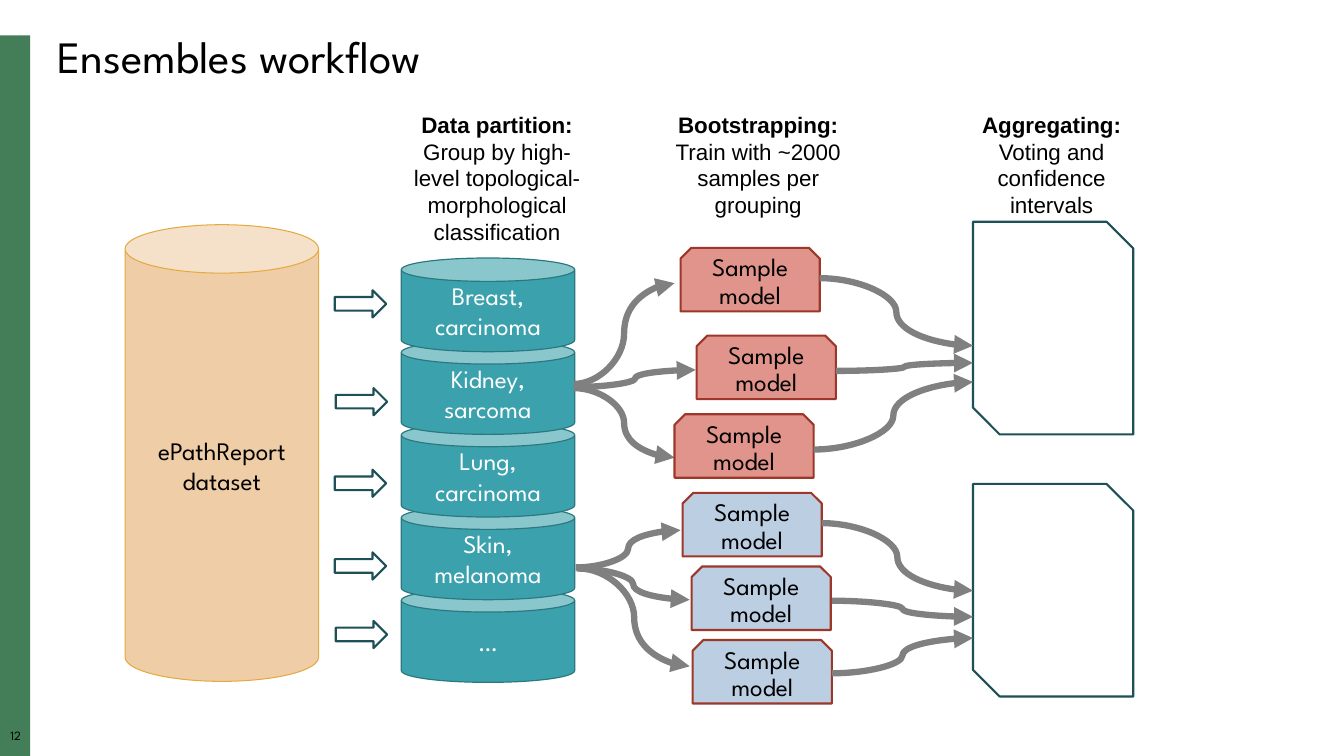
from lxml import etree
from pptx import Presentation
from pptx.dml.color import RGBColor
from pptx.enum.shapes import MSO_CONNECTOR, MSO_SHAPE
from pptx.enum.text import MSO_ANCHOR, PP_ALIGN
from pptx.oxml.ns import qn
from pptx.util import Inches, Pt

RECT, CAN = MSO_SHAPE.RECTANGLE, MSO_SHAPE.CAN
ARROW = MSO_SHAPE.RIGHT_ARROW
SNIP = MSO_SHAPE.SNIP_2_SAME_RECTANGLE
PANEL = MSO_SHAPE.SNIP_2_DIAG_RECTANGLE
CURVE = MSO_CONNECTOR.CURVE
MIDDLE, TOP = MSO_ANCHOR.MIDDLE, MSO_ANCHOR.TOP
LEFT, CENTER = PP_ALIGN.LEFT, PP_ALIGN.CENTER

BLACK = RGBColor(0x00, 0x00, 0x00)
WHITE = RGBColor(0xFF, 0xFF, 0xFF)
GREEN = RGBColor(0x44, 0x7E, 0x59)
TEAL = RGBColor(0x3B, 0xA2, 0xAD)
DEEP = RGBColor(0x2C, 0x78, 0x80)
DARK = RGBColor(0x1D, 0x51, 0x57)
SAND = RGBColor(0xEF, 0xCD, 0xA7)
AMBER = RGBColor(0xE5, 0xA9, 0x40)
ROSE = RGBColor(0xE0, 0x94, 0x8B)
BLUE = RGBColor(0xBC, 0xCE, 0xE2)
BRICK = RGBColor(0x9C, 0x37, 0x2A)
GRAY = RGBColor(0x80, 0x80, 0x80)

SPARTAN, ARIAL = "League Spartan", "Arial"

GROUPS = ["Breast, carcinoma", "Kidney, sarcoma", "Lung, carcinoma",
          "Skin, melanoma", "…"]
BLOCKS = [(3.32, 2.88), (3.33, 3.85), (3.32, 4.66), (3.32, 5.48), (3.33, 6.16)]
HEADS = [
    (3.99, 1.45, "Data partition:",
     "Group by high-level topological-morphological classification"),
    (6.58, 1.18, "Bootstrapping:", "Train with ~2000 samples per grouping"),
    (9.49, 1.18, "Aggregating:", "Voting and confidence intervals"),
]
# Each branch: panel top, model fill, then per model its left and top,
# the arrow coming in, and the arrow going out to the panel
BRANCHES = [
    (2.2, ROSE, [
        (6.75, 2.46, (5.69, 3.81, 6.69, 2.81), (8.13, 2.76, 9.65, 3.43)),
        (6.91, 3.33, (5.7, 3.84, 6.9, 3.67), (8.29, 3.68, 9.65, 3.6)),
        (6.69, 4.11, (5.69, 3.85, 6.69, 4.54), (8.07, 4.46, 9.65, 3.79)),
    ]),
    (4.8, BLUE, [
        (6.77, 4.89, (5.71, 5.63, 6.75, 5.26), (8.15, 5.19, 9.65, 5.86)),
        (6.86, 5.62, (5.72, 5.64, 6.84, 5.95), (8.25, 5.96, 9.65, 6.12)),
        (6.87, 6.35, (5.74, 5.64, 6.84, 6.61), (8.25, 6.68, 9.65, 6.33)),
    ]),
]


def inset(frame, side, edge):
    frame.margin_left = frame.margin_right = Inches(side)
    frame.margin_top = frame.margin_bottom = Inches(edge)


def write(frame, text, size, font=SPARTAN, color=BLACK, align=CENTER,
          anchor=MIDDLE, space=1.0):
    frame.word_wrap = True
    frame.vertical_anchor = anchor
    frame.text = text
    for para in frame.paragraphs:
        para.alignment = align
        para.line_spacing = space
        for run in para.runs:
            run.font.size = Pt(size)
            run.font.name = font
            run.font.color.rgb = color


def shape(slide, kind, x, y, w, h, fill, line=None, width=1.5):
    item = slide.shapes.add_shape(kind, Inches(x), Inches(y),
                                  Inches(w), Inches(h))
    item.shadow.inherit = False
    item.fill.solid()
    item.fill.fore_color.rgb = fill
    if line is None:
        item.line.fill.background()
    else:
        item.line.color.rgb = line
        item.line.width = Pt(width)
    return item


def box(slide, x, y, w, h):
    return slide.shapes.add_textbox(Inches(x), Inches(y), Inches(w),
                                    Inches(h)).text_frame


def curve(slide, ends):
    link = slide.shapes.add_connector(CURVE, *[Inches(n) for n in ends])
    link.line.color.rgb = GRAY
    link.line.width = Pt(4.5)
    props = link.element.spPr
    etree.SubElement(props.find(qn("a:ln")), qn("a:tailEnd"), type="triangle")
    etree.SubElement(props, qn("a:effectLst"))


def model(slide, x, y, fill):
    item = shape(slide, SNIP, x, y, 1.38, 0.63, fill, BRICK)
    inset(item.text_frame, 0.1, 0.2)
    write(item.text_frame, "Sample model", 18, space=0.9)


def head(slide, x, h, title, note):
    frame = box(slide, x, 1.05, 1.88, h)
    inset(frame, 0.05, 0.05)
    write(frame, f"{title}\n{note}", 16, ARIAL, anchor=TOP)
    frame.paragraphs[0].runs[0].font.bold = True


def branch(slide, top, fill, models):
    """Draw the models of one grouping and the panel that collects them."""
    shape(slide, PANEL, 9.65, top, 1.59, 2.11, WHITE, DARK)
    for x, y, came, goes in models:
        curve(slide, came)
        model(slide, x, y, fill)
        curve(slide, goes)


def frame_page(slide):
    """Draw the side bar, the page number and the title."""
    shape(slide, RECT, 0, 0.35, 0.3, 7.15, GREEN)
    page = box(slide, 0, 7.24, 0.31, 0.17)
    inset(page, 0, 0)
    write(page, "12", 9, anchor=TOP, space=0.9)
    write(box(slide, 0.47, 0.3, 12.5, 0.59), "Ensembles workflow", 32,
          align=LEFT, anchor=TOP, space=0.9)


def main():
    deck = Presentation()
    deck.slide_width, deck.slide_height = Inches(13.33), Inches(7.5)
    slide = deck.slides.add_slide(deck.slide_layouts[6])

    frame_page(slide)
    data = shape(slide, CAN, 1.24, 2.23, 1.92, 4.53, SAND, AMBER, 0.75)
    write(data.text_frame, "ePathReport dataset", 18)
    # Cans overlap, so the lowest is drawn first
    for row, name in reversed(list(enumerate(GROUPS))):
        can = shape(slide, CAN, 3.98, 2.56 + 0.82 * row, 1.72, 0.93,
                    TEAL, DEEP, 0.85)
        write(can.text_frame, name, 18, color=WHITE)
    for x, y in BLOCKS:
        shape(slide, ARROW, x, y, 0.51, 0.27, WHITE, DARK)
    for item in HEADS:
        head(slide, *item)
    for item in BRANCHES:
        branch(slide, *item)
    deck.save("out.pptx")


if __name__ == "__main__":
    main()
